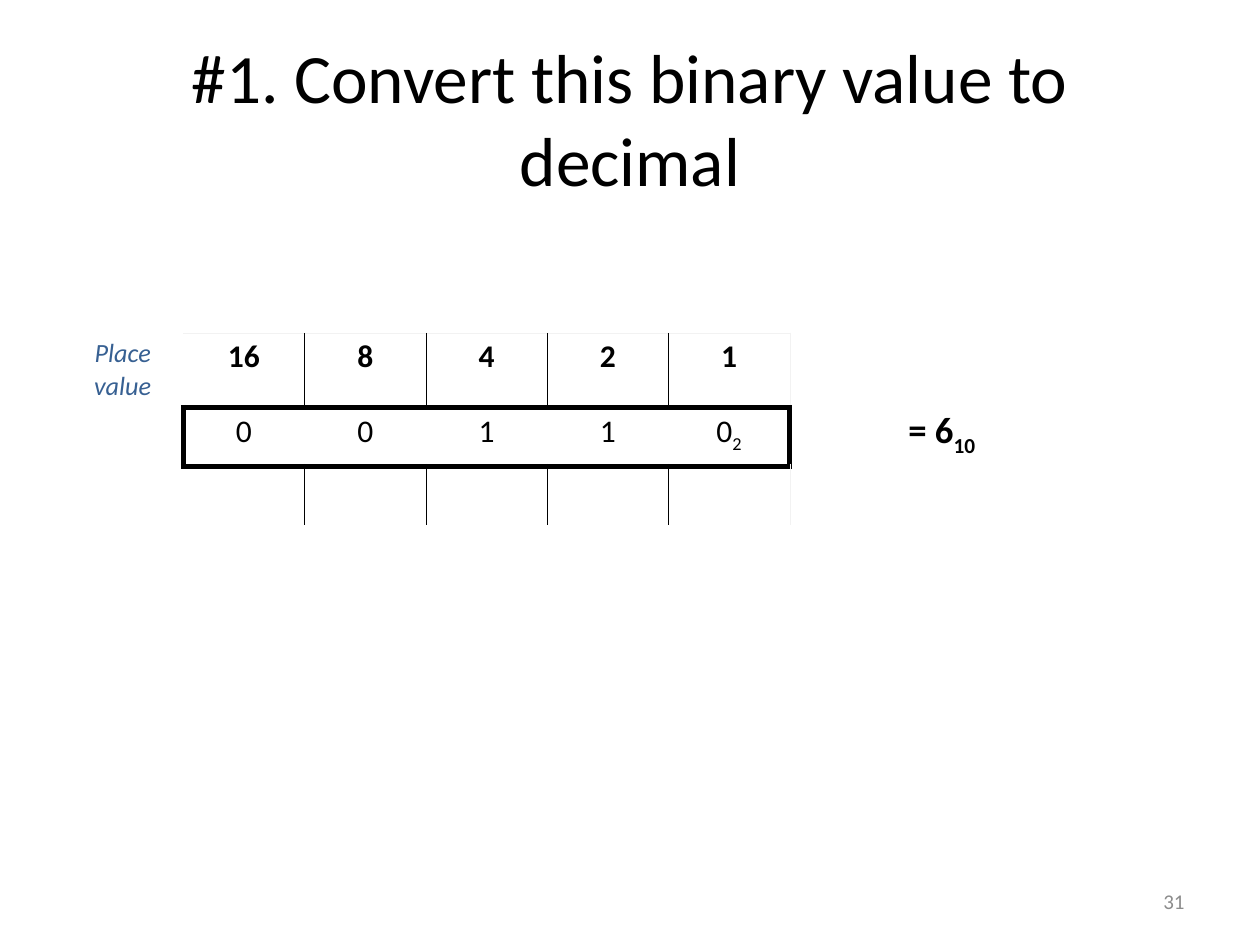
from dataclasses import dataclass
from typing import Optional

from lxml.etree import SubElement
from pptx import Presentation
from pptx.dml.color import RGBColor
from pptx.enum.text import MSO_ANCHOR as Anchor, PP_ALIGN as Align
from pptx.oxml.ns import qn
from pptx.util import Pt

EMU_PER_PX = 914400 / 126


@dataclass(frozen=True)
class Theme:
    font: str = "Calibri"
    ink: str = "000000"
    label: str = "376092"
    muted: str = "8C8C8C"
    pale: str = "F2F2F2"
    title_size: float = 39.6
    answer_size: float = 21
    cell_size: float = 18
    label_size: float = 15
    number_size: float = 12
    thin: float = 0.25
    thick: float = 3


THEME = Theme()


@dataclass(frozen=True)
class Run:
    text: str
    size: float = THEME.cell_size
    color: str = THEME.ink
    bold: bool = False
    italic: bool = False
    subscript: bool = False


@dataclass(frozen=True)
class TextBlock:
    left: int
    top: int
    width: int
    height: int
    runs: tuple[Run, ...]
    align: Align = Align.LEFT
    anchor: Anchor = Anchor.TOP


@dataclass(frozen=True)
class Border:
    color: str
    width: float


THIN = Border(THEME.ink, THEME.thin)
THICK = Border(THEME.ink, THEME.thick)
PALE = Border(THEME.pale, THEME.thin)

# Text blocks
TEXT_BLOCKS = (
    TextBlock(63, 38, 1134, 158,
              (Run("#1. Convert this binary value to decimal", THEME.title_size),),
              Align.CENTER, Anchor.MIDDLE),
    TextBlock(896, 401, 107, 57,
              (Run("= 6", THEME.answer_size, bold=True),
               Run("10", THEME.answer_size, bold=True, subscript=True))),
    TextBlock(903, 876, 294, 50,
              (Run("31", THEME.number_size, THEME.muted),),
              Align.RIGHT, Anchor.MIDDLE),
)

# Place value table
TABLE_LEFT, TABLE_TOP, TABLE_WIDTH = 62, 333, 728
ROW_HEIGHTS = (72, 59, 59)
PLACE_VALUES = ("16", "8", "4", "2", "1")
BITS = "00110"
PLACE_ROW, BIT_ROW, WORK_ROW = range(3)
LAST_COLUMN = len(PLACE_VALUES)


def px(value: float) -> int:
    return round(value * EMU_PER_PX)


def add_runs(paragraph, runs: tuple[Run, ...]) -> None:
    for item in runs:
        run = paragraph.add_run()
        run.text = item.text
        font = run.font
        font.name, font.size = THEME.font, Pt(item.size)
        font.bold, font.italic = item.bold, item.italic
        font.color.rgb = RGBColor.from_string(item.color)
        if item.subscript:
            run._r.get_or_add_rPr().set("baseline", "-25000")


def add_text(slide, block: TextBlock) -> None:
    shape = slide.shapes.add_textbox(
        px(block.left), px(block.top), px(block.width), px(block.height))
    frame = shape.text_frame
    frame.word_wrap = True
    frame.vertical_anchor = block.anchor
    paragraph = frame.paragraphs[0]
    paragraph.alignment = block.align
    add_runs(paragraph, block.runs)


def set_border(cell, side: str, border: Optional[Border]) -> None:
    line = SubElement(cell._tc.get_or_add_tcPr(), qn(f"a:ln{side}"))
    if border is None:
        SubElement(line, qn("a:noFill"))
        return
    line.set("w", str(Pt(border.width)))
    fill = SubElement(line, qn("a:solidFill"))
    SubElement(fill, qn("a:srgbClr")).set("val", border.color)


def vertical_border(row: int, edge: int) -> Optional[Border]:
    """Line at the left of column number `edge`."""
    if row == BIT_ROW:
        return THICK if edge in (1, LAST_COLUMN + 1) else None
    if edge == LAST_COLUMN + 1:
        return PALE
    return THIN if edge > 1 else None


def horizontal_border(column: int, edge: int) -> Optional[Border]:
    """Line above row number `edge`."""
    if column == 0:
        return None
    return {PLACE_ROW: PALE, BIT_ROW: THICK, WORK_ROW: THICK}.get(edge)


def cell_runs(row: int, column: int) -> tuple[Run, ...]:
    if row == PLACE_ROW and column == 0:
        return (Run("Place value", THEME.label_size, THEME.label, italic=True),)
    if row == PLACE_ROW:
        return (Run(PLACE_VALUES[column - 1], bold=True),)
    if row == BIT_ROW and column > 0:
        base = (Run("2", subscript=True),) if column == LAST_COLUMN else ()
        return (Run(BITS[column - 1]),) + base
    return ()


def add_place_table(slide) -> None:
    column_count = LAST_COLUMN + 1
    table = slide.shapes.add_table(
        len(ROW_HEIGHTS), column_count, px(TABLE_LEFT), px(TABLE_TOP),
        px(TABLE_WIDTH), px(sum(ROW_HEIGHTS))).table
    table.first_row = table.horz_banding = False
    for column in table.columns:
        column.width = px(TABLE_WIDTH / column_count)
    for row, height in enumerate(ROW_HEIGHTS):
        table.rows[row].height = px(height)
        for column in range(column_count):
            cell = table.cell(row, column)
            cell.margin_left = cell.margin_right = px(9)
            cell.margin_top = cell.margin_bottom = px(5)
            set_border(cell, "L", vertical_border(row, column))
            set_border(cell, "R", vertical_border(row, column + 1))
            set_border(cell, "T", horizontal_border(column, row))
            set_border(cell, "B", horizontal_border(column, row + 1))
            cell.fill.background()
            paragraph = cell.text_frame.paragraphs[0]
            paragraph.alignment = Align.CENTER
            add_runs(paragraph, cell_runs(row, column))


def main() -> None:
    presentation = Presentation()
    presentation.slide_width, presentation.slide_height = px(1260), px(945)
    slide = presentation.slides.add_slide(presentation.slide_layouts[6])
    add_place_table(slide)
    for block in TEXT_BLOCKS:
        add_text(slide, block)
    presentation.save("out.pptx")


if __name__ == "__main__":
    main()
